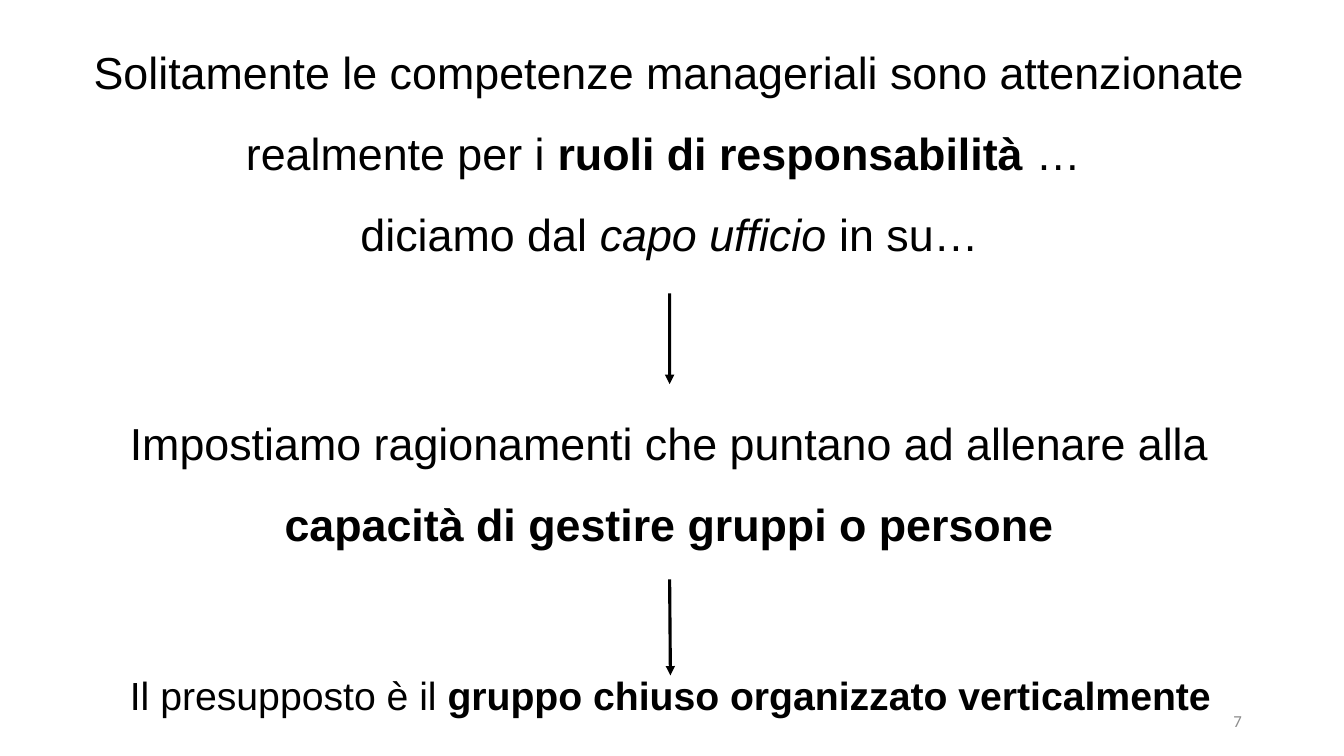
from lxml import etree
from pptx import Presentation
from pptx.dml.color import RGBColor
from pptx.enum.shapes import MSO_CONNECTOR
from pptx.enum.text import MSO_ANCHOR, MSO_AUTO_SIZE, PP_ALIGN
from pptx.oxml.ns import qn
from pptx.util import Cm, Pt

STRAIGHT = MSO_CONNECTOR.STRAIGHT
TOP, MIDDLE = MSO_ANCHOR.TOP, MSO_ANCHOR.MIDDLE
CENTER, RIGHT = PP_ALIGN.CENTER, PP_ALIGN.RIGHT
NO_AUTOFIT = MSO_AUTO_SIZE.NONE
TOP_SIDE, BOTTOM_SIDE = 0, 2
BLACK, GREY = "000000", "8C8C8C"

# Boxes in centimetres: left, top, width, height
TITLE_BOX = (1.14, -0.38, 31.47, 7.77)
REASONING_BOX = (1.04, 9.68, 31.67, 4.92)
PREMISE_BOX = (2.39, 17.02, 29.01, 1.27)
NUMBER_BOX = (23.93, 17.65, 7.62, 1.02)


def color(hex_string):
    return RGBColor.from_string(hex_string)


def write_text(shape, runs, size, line_spacing=1.0, space_before=0,
               anchor=TOP, alignment=CENTER, font_name="Arial", font_color=BLACK):
    """Fill one paragraph from (text, style) pairs; style is "", "bold", "italic" or "break"."""
    frame = shape.text_frame
    frame.word_wrap = True
    frame.auto_size = NO_AUTOFIT
    frame.vertical_anchor = anchor
    paragraph = frame.paragraphs[0]
    paragraph.alignment = alignment
    paragraph.line_spacing = line_spacing
    paragraph.space_before = Pt(space_before)
    paragraph.font.name = font_name
    paragraph.font.size = Pt(size)
    paragraph.font.color.rgb = color(font_color)
    for text, style in runs:
        if style == "break":
            paragraph.add_line_break()
            continue
        run = paragraph.add_run()
        run.text = text
        if style == "bold":
            run.font.bold = True
        elif style == "italic":
            run.font.italic = True


def place_title(slide, box):
    title = slide.shapes.title
    title.left, title.top, title.width, title.height = map(Cm, box)
    write_text(title, [
        ("Solitamente le competenze manageriali sono attenzionate realmente per i ", ""),
        ("ruoli di responsabilità", "bold"),
        (" … ", ""),
        ("", "break"),
        ("diciamo dal ", ""),
        ("capo ufficio ", "italic"),
        ("in su…", ""),
    ], 32, line_spacing=1.5, anchor=MIDDLE)
    return title


def add_text(slide, box, runs, size, **text_format):
    text_box = slide.shapes.add_textbox(*map(Cm, box))
    write_text(text_box, runs, size, **text_format)
    return text_box


def add_down_arrow(slide, upper, lower):
    arrow = slide.shapes.add_connector(STRAIGHT, 0, 0, 0, 0)
    arrow.begin_connect(upper, BOTTOM_SIDE)
    arrow.end_connect(lower, TOP_SIDE)
    arrow.line.width = Pt(2.25)
    arrow.line.color.rgb = color(BLACK)
    etree.SubElement(arrow.line._get_or_add_ln(), qn("a:tailEnd"), type="triangle")
    etree.SubElement(arrow._element.spPr, qn("a:effectLst"))


def build_slide(presentation):
    slide = presentation.slides.add_slide(presentation.slide_layouts[5])
    title = place_title(slide, TITLE_BOX)
    reasoning = add_text(slide, REASONING_BOX, [
        ("Impostiamo ragionamenti che puntano ad allenare alla ", ""),
        ("capacità di gestire gruppi o persone", "bold"),
    ], 32, line_spacing=1.5, space_before=10)
    add_text(slide, NUMBER_BOX, [("7", "")], 12, anchor=MIDDLE,
             alignment=RIGHT, font_name="Calibri", font_color=GREY)
    premise = add_text(slide, PREMISE_BOX, [
        ("Il presupposto è il ", ""),
        ("gruppo chiuso organizzato verticalmente", "bold"),
    ], 28, line_spacing=0.8, space_before=10)
    add_down_arrow(slide, title, reasoning)
    add_down_arrow(slide, reasoning, premise)


def main():
    presentation = Presentation()
    presentation.slide_width = Cm(33.87)
    presentation.slide_height = Cm(19.05)
    build_slide(presentation)
    presentation.save("out.pptx")


if __name__ == "__main__":
    main()
